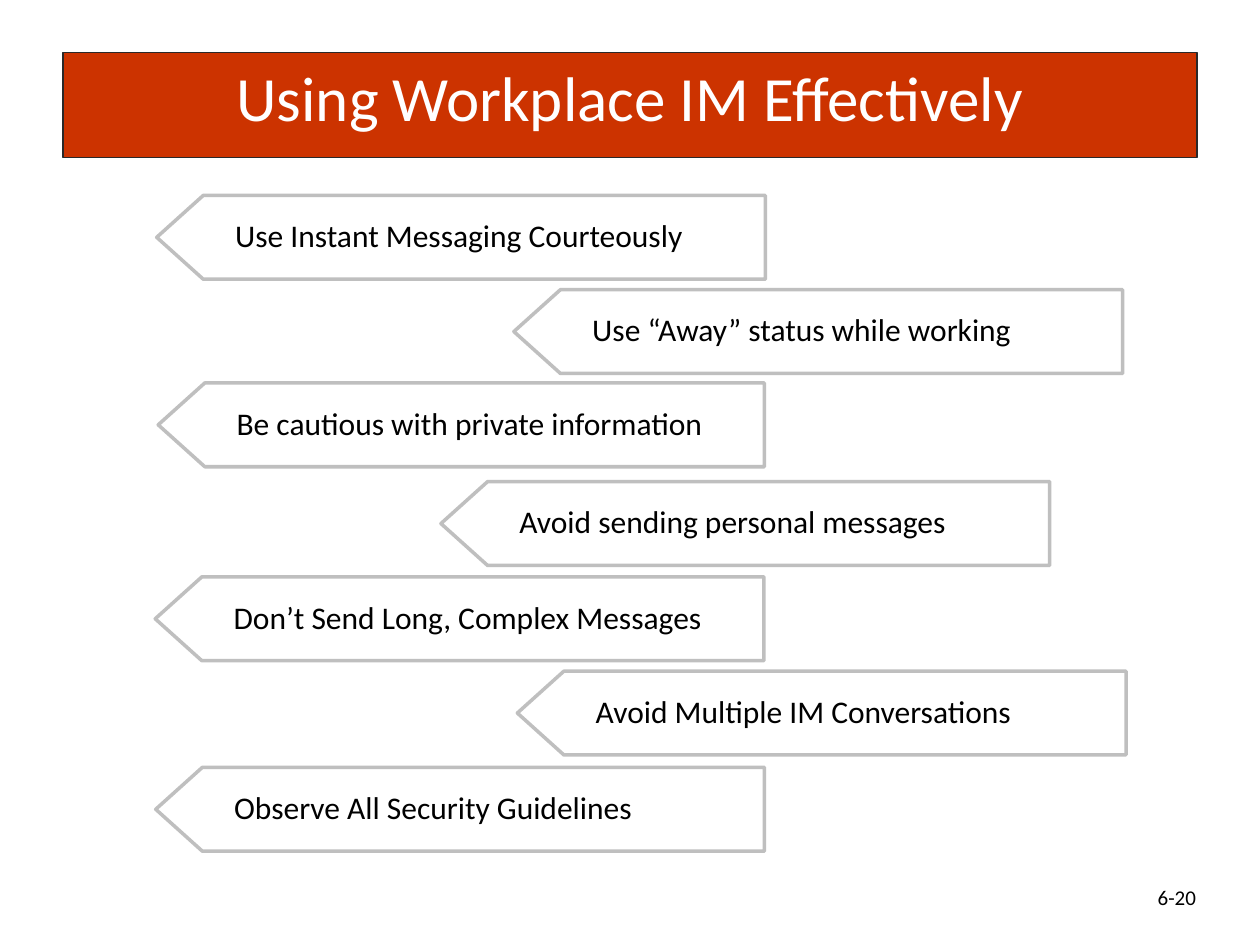
from dataclasses import dataclass

from pptx import Presentation
from pptx.dml.color import RGBColor
from pptx.enum.shapes import MSO_SHAPE as Shape
from pptx.enum.text import MSO_ANCHOR as Anchor, PP_ALIGN as Align
from pptx.util import Cm, Pt

FONT = "Calibri"
TAG_WIDTH, TAG_HEIGHT, TIP_DEPTH = 12.27, 1.69, 0.94


@dataclass
class Tag:
    text: str
    left: float
    top: float
    width: float = TAG_WIDTH


TAGS = [
    Tag("Use Instant Messaging Courteously", 3.16, 3.94),
    Tag("Use “Away” status while working", 10.36, 5.84),
    Tag("Be cautious with private information", 3.19, 7.72, 12.22),
    Tag("Avoid sending personal messages", 8.89, 9.71),
    Tag("Don’t Send Long, Complex Messages", 3.13, 11.63),
    Tag("Avoid Multiple IM Conversations", 10.43, 13.53),
    Tag("Observe All Security Guidelines", 3.14, 15.47),
]


def colour(value: str) -> RGBColor:
    return RGBColor.from_string(value)


def paint(shape, fill: str, line: str, weight: float) -> None:
    shape.shadow.inherit = False
    shape.fill.solid()
    shape.fill.fore_color.rgb = colour(fill)
    shape.line.color.rgb = colour(line)
    shape.line.width = Pt(weight)


def write(shape, text: str, size: int, ink: str, align: Align, anchor: Anchor):
    frame = shape.text_frame
    frame.word_wrap = True
    frame.vertical_anchor = anchor
    para = frame.paragraphs[0]
    para.text = text
    para.alignment = align
    para.font.name = FONT
    para.font.size = Pt(size)
    para.font.color.rgb = colour(ink)
    return frame


def draw_tag(page, tag: Tag) -> None:
    right, bottom = tag.left + tag.width, tag.top + TAG_HEIGHT
    shoulder, middle = tag.left + TIP_DEPTH, tag.top + TAG_HEIGHT / 2
    outline = [(shoulder, bottom), (tag.left, middle), (shoulder, tag.top), (right, tag.top)]
    builder = page.shapes.build_freeform(Cm(right), Cm(bottom))
    builder.add_line_segments([(Cm(x), Cm(y)) for x, y in outline], close=True)
    shape = builder.convert_to_shape()
    paint(shape, "FFFFFF", "BFBFBF", 2)
    frame = write(shape, tag.text, 18, "000000", Align.LEFT, Anchor.MIDDLE)
    frame.margin_left, frame.margin_right = Cm(1.58), Cm(0.76)
    frame.margin_top = frame.margin_bottom = Cm(0.41)
    frame.paragraphs[0].line_spacing = 0.9


def main() -> None:
    deck = Presentation()
    deck.slide_width, deck.slide_height = Cm(25.4), Cm(19.05)
    page = deck.slides.add_slide(deck.slide_layouts[6])

    # Title bar
    banner = page.shapes.add_shape(Shape.RECTANGLE, Cm(1.27), Cm(1.06), Cm(22.86), Cm(2.12))
    paint(banner, "CC3300", "292929", 0.75)
    write(banner, "Using Workplace IM Effectively", 36, "FFFFFF", Align.CENTER, Anchor.TOP)

    # Guideline tags
    for tag in TAGS:
        draw_tag(page, tag)

    # Page number
    box = page.shapes.add_textbox(Cm(22.66), Cm(17.78), Cm(1.7), Cm(0.61))
    write(box, "6-20", 12, "000000", Align.RIGHT, Anchor.MIDDLE)

    deck.save("out.pptx")


if __name__ == "__main__":
    main()
